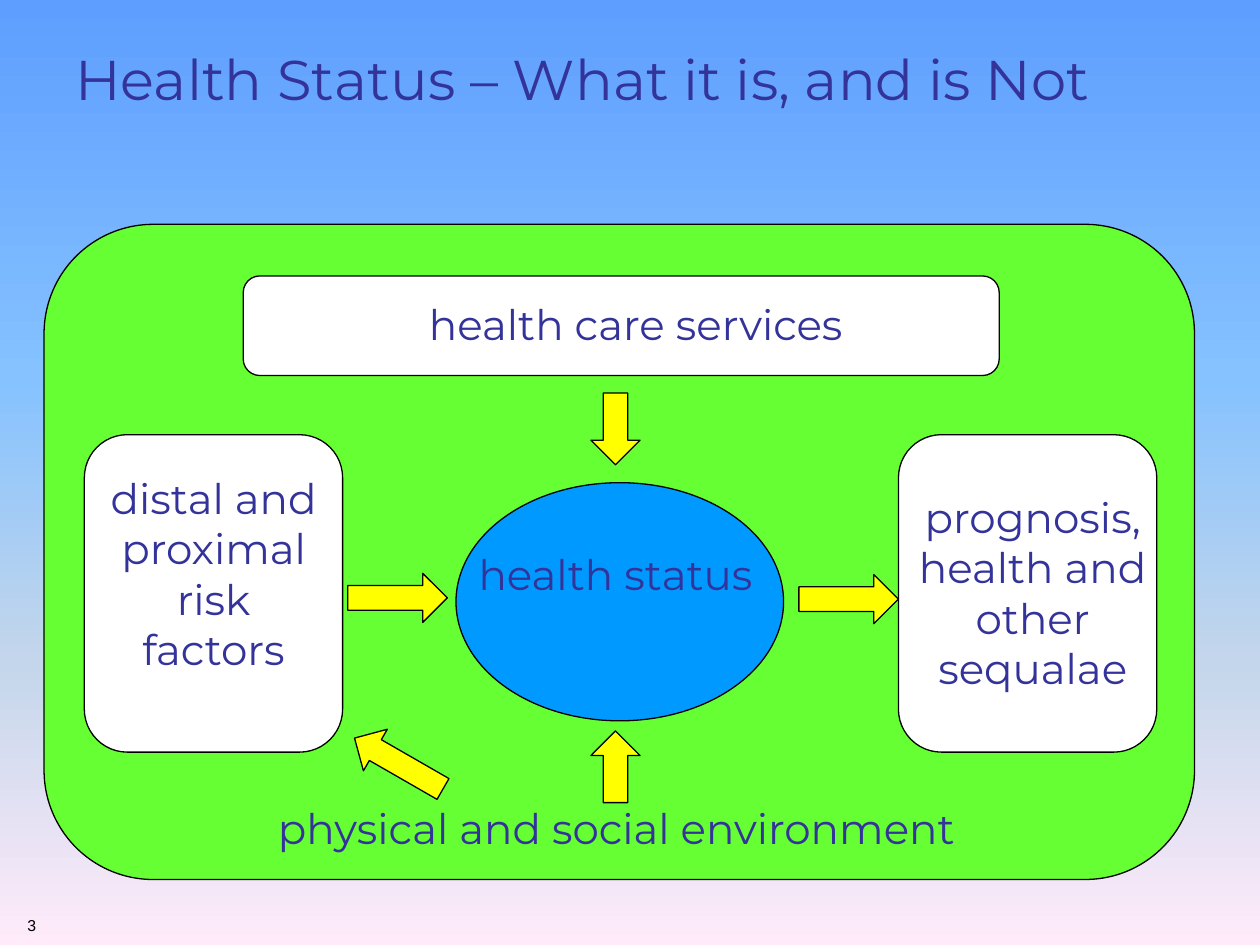
from copy import deepcopy

from pptx import Presentation
from pptx import util as u
from pptx.dml.color import RGBColor
from pptx.enum import shapes, text
from pptx.oxml import ns

SHAPE = shapes.MSO_SHAPE
ALIGN = text.PP_ALIGN


def colour(value):
    return RGBColor.from_string(value)


def points(*lengths):
    return [u.Pt(length) for length in lengths]


def apply(target, values):
    for name, value in values.items():
        setattr(target, name, value)


class Diagram:
    INK = "333399"
    CARD = "FFFFFF"
    ARROW = "FFFF00"
    TITLE = {"name": "Montserrat", "size": u.Pt(32)}
    LABEL = {"name": "Montserrat", "size": u.Pt(24)}
    NUMBER = {"name": "Arial", "size": u.Pt(9)}

    def __init__(self, slide):
        self.slide = slide
        self.shapes = slide.shapes

    def background(self, stops):
        fill = self.slide.background.fill
        fill.gradient()
        fill.gradient_angle = 270
        stop_list = self.slide.element.find(".//" + ns.qn("a:gsLst"))
        while len(stop_list) < len(stops):
            stop_list.append(deepcopy(stop_list[0]))
        for stop, (position, value) in zip(fill.gradient_stops, stops):
            stop.position = position
            stop.color.rgb = colour(value)

    def start_group(self):
        self.shapes = self.slide.shapes.add_group_shape().shapes

    def words(self, wording, box, font=LABEL, ink=INK, align=ALIGN.CENTER,
              fit=text.MSO_AUTO_SIZE.SHAPE_TO_FIT_TEXT):
        frame = self.shapes.add_textbox(*points(*box)).text_frame
        apply(frame, {"word_wrap": True, "auto_size": fit,
                      "vertical_anchor": text.MSO_ANCHOR.TOP})
        paragraph = frame.paragraphs[0]
        paragraph.alignment = align
        run = paragraph.add_run()
        run.text = wording
        apply(run.font, font)
        run.font.color.rgb = colour(ink)

    def shape(self, kind, box, fill, rotation=0):
        shape = self.shapes.add_shape(kind, *points(*box))
        shape.shadow.inherit = False
        shape.rotation = rotation
        shape.fill.solid()
        shape.fill.fore_color.rgb = colour(fill)
        shape.line.color.rgb = colour("000000")
        shape.line.width = u.Pt(0.75)

    def card(self, box, wording, text_box):
        self.shape(SHAPE.ROUNDED_RECTANGLE, box, self.CARD)
        self.words(wording, text_box)

    def arrow(self, left, top, width, height=28.1, rotation=0):
        self.shape(SHAPE.RIGHT_ARROW, (left, top, width, height),
                   self.ARROW, rotation)


def main():
    presentation = Presentation()
    presentation.slide_width, presentation.slide_height = points(720, 540)
    slide = presentation.slides.add_slide(presentation.slide_layouts[6])
    diagram = Diagram(slide)
    diagram.background([(0, "5E9EFF"), (0.4, "85C2FF"),
                        (0.7, "C4D6EB"), (1, "FFEBFA")])

    # Title and slide number
    plain = {"align": ALIGN.LEFT, "fit": text.MSO_AUTO_SIZE.NONE}
    diagram.words("Health Status – What it is, and is Not",
                  (36, 21.6, 663.8, 90), Diagram.TITLE, **plain)
    diagram.words("3", (8.6, 519.8, 119.5, 17.3), Diagram.NUMBER,
                  "000000", **plain)

    # Environment around everything
    diagram.start_group()
    diagram.shape(SHAPE.ROUNDED_RECTANGLE, (25.2, 128.2, 657.4, 374.4),
                  "66FF33")

    # Causes, consequences and services
    diagram.card((48.2, 248.4, 147.6, 181.4),
                 "distal and proximal risk factors",
                 (54, 266.4, 136.1, 152.6))
    diagram.card((513.4, 248.4, 147.6, 181.4),
                 "prognosis, health and other sequalae",
                 (513.4, 277.2, 153.4, 152.6))
    diagram.words("physical and social environment",
                  (113.8, 455, 476.6, 36))
    diagram.card((139, 157.7, 432, 56.9), "health care services",
                 (139, 167, 448.6, 36))

    # Health status in the centre
    diagram.shape(SHAPE.OVAL, (260.6, 275.8, 187.2, 136.1), "0099FF")
    diagram.words("health status", (261.4, 309.6, 180.7, 65.5))

    # Arrows of influence
    diagram.arrow(198.7, 327.6, 56.9)
    diagram.arrow(331.2, 231.1, 41, rotation=90)
    diagram.arrow(456.5, 328.3, 56.9)
    diagram.arrow(331.2, 424.1, 41, rotation=270)
    diagram.arrow(198.7, 422.6, 58.3, 27.4, rotation=209.9)

    presentation.save("out.pptx")


if __name__ == "__main__":
    main()
